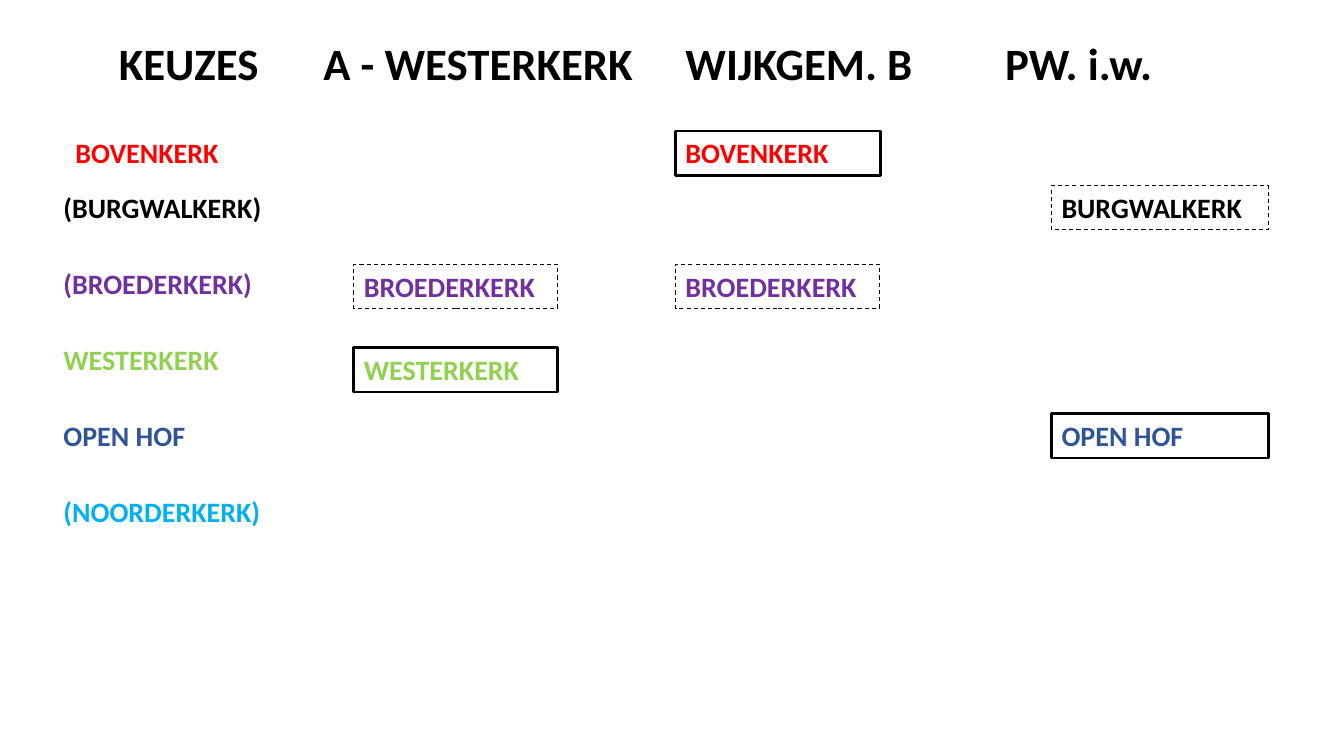
from pptx import Presentation
from pptx.dml.color import RGBColor
from pptx.enum import dml, shapes, text
from pptx.util import Inches, Pt

BLACK = RGBColor(0x00, 0x00, 0x00)
WHITE = RGBColor(0xFF, 0xFF, 0xFF)
RED = RGBColor(0xFF, 0x00, 0x00)
PURPLE = RGBColor(0x70, 0x30, 0xA0)
GREEN = RGBColor(0x92, 0xD0, 0x50)
BLUE = RGBColor(0x2F, 0x55, 0x97)
CYAN = RGBColor(0x00, 0xB0, 0xF0)

FIRST_ROW = 1.3
SECOND_ROW = 1.84
ROW_STEP = 0.755
ROW_HEIGHT = 0.44
HEADING_TOP = 0.31
HEADING_HEIGHT = 0.64
LABEL_LEFT = 0.53
COLUMN_A, COLUMN_B, COLUMN_PW = 3.51, 6.7, 10.43

presentation = Presentation()
presentation.slide_width = Inches(13.33)
presentation.slide_height = Inches(7.5)
slide = presentation.slides.add_slide(presentation.slide_layouts[6])


def add_label(words, left, top, width, height=ROW_HEIGHT, size=20, color=BLACK,
              boxed=True, fill=None, border=None, dashed=False):
    place = [Inches(length) for length in (left, top, width, height)]
    if boxed:
        shape = slide.shapes.add_shape(shapes.MSO_SHAPE.RECTANGLE, *place)
        shape.shadow.inherit = False
    else:
        shape = slide.shapes.add_textbox(*place)
    if fill is None:
        shape.fill.background()
    else:
        shape.fill.solid()
        shape.fill.fore_color.rgb = fill
    if border is None:
        shape.line.fill.background()
    else:
        shape.line.color.rgb = BLACK
        shape.line.width = Pt(border)
        if dashed:
            shape.line.dash_style = dml.MSO_LINE.DASH
    frame = shape.text_frame
    frame.word_wrap = True
    frame.auto_size = text.MSO_AUTO_SIZE.SHAPE_TO_FIT_TEXT
    frame.vertical_anchor = text.MSO_ANCHOR.TOP
    paragraph = frame.paragraphs[0]
    paragraph.alignment = text.PP_ALIGN.LEFT
    run = paragraph.add_run()
    run.text = words
    run.font.name = "Calibri"
    run.font.size = Pt(size)
    run.font.bold = True
    run.font.color.rgb = color


headings = [
    ("KEUZES", 1.08, 2.15),
    ("A - WESTERKERK", 3.11, 3.41),
    ("WIJKGEM. B", COLUMN_B, 2.53),
    ("PW. i.w.", 9.87, 2.15),
]
for words, left, width in headings:
    add_label(words, left, HEADING_TOP, width, HEADING_HEIGHT, size=32, fill=WHITE)

add_label("BOVENKERK", 0.65, FIRST_ROW, 3.01, color=RED, boxed=False)

churches = [
    ("(BURGWALKERK)", BLACK, 3.01, False),
    ("(BROEDERKERK)", PURPLE, 3.01, False),
    ("WESTERKERK", GREEN, 3.01, False),
    ("OPEN HOF", BLUE, 2.15, True),
    ("(NOORDERKERK)", CYAN, 2.45, True),
]
for row, (words, color, width, boxed) in enumerate(churches):
    add_label(words, LABEL_LEFT, SECOND_ROW + row * ROW_STEP, width, color=color,
              boxed=boxed, fill=WHITE if boxed else None)

firm_choices = [
    ("BOVENKERK", COLUMN_B, FIRST_ROW, 2.03, RED, None),
    ("WESTERKERK", COLUMN_A, 3.45, 2.02, GREEN, None),
    ("OPEN HOF", COLUMN_PW, SECOND_ROW + 3 * ROW_STEP, 2.15, BLUE, WHITE),
]
for words, left, top, width, color, fill in firm_choices:
    add_label(words, left, top, width, color=color, fill=fill, border=2)

open_choices = [
    ("BROEDERKERK", COLUMN_A, 2.62, 2.02, PURPLE),
    ("BROEDERKERK", COLUMN_B, 2.62, 2.02, PURPLE),
    ("BURGWALKERK", COLUMN_PW, SECOND_ROW, 2.15, BLACK),
]
for words, left, top, width, color in open_choices:
    add_label(words, left, top, width, color=color, border=0.75, dashed=True)

presentation.save("out.pptx")
